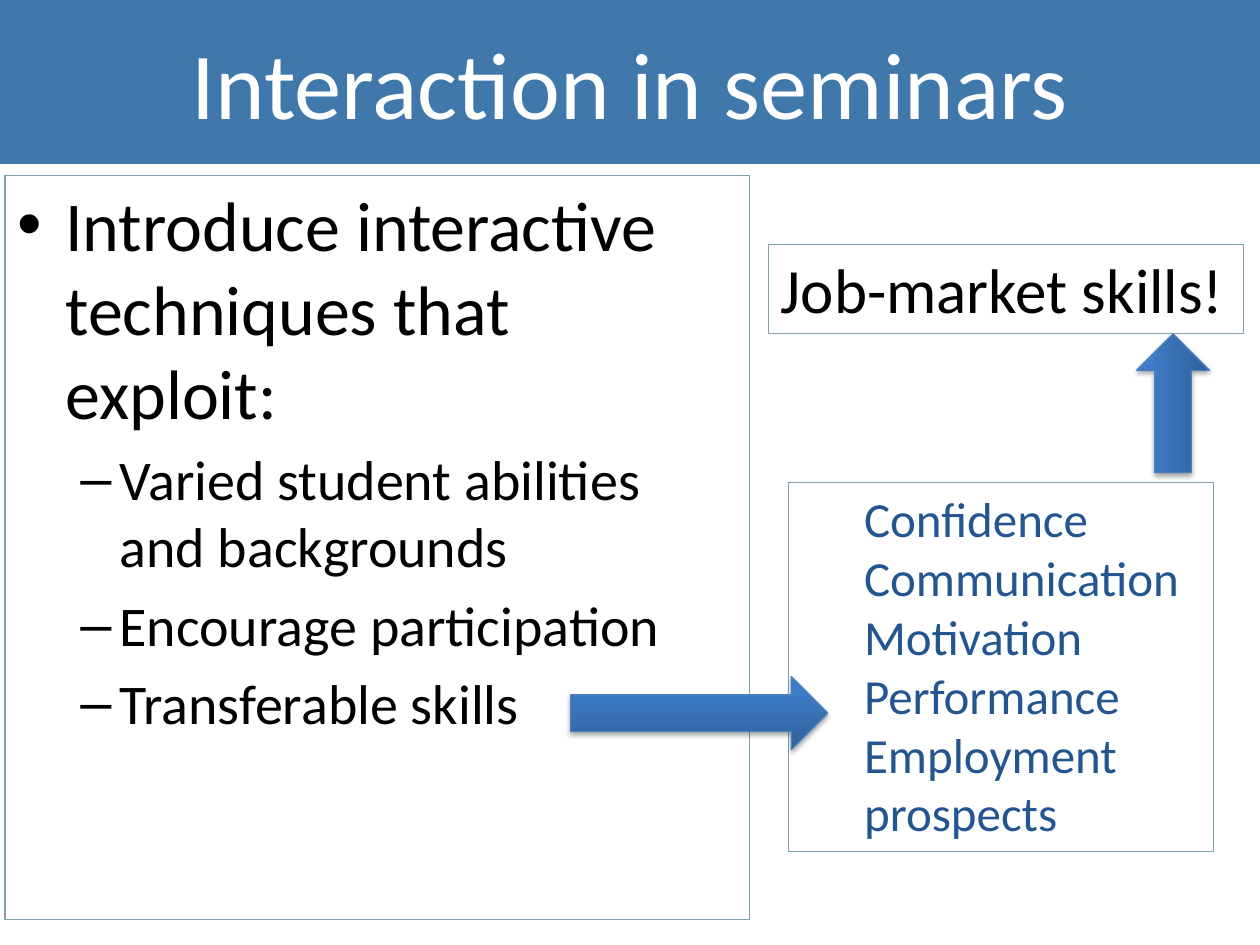
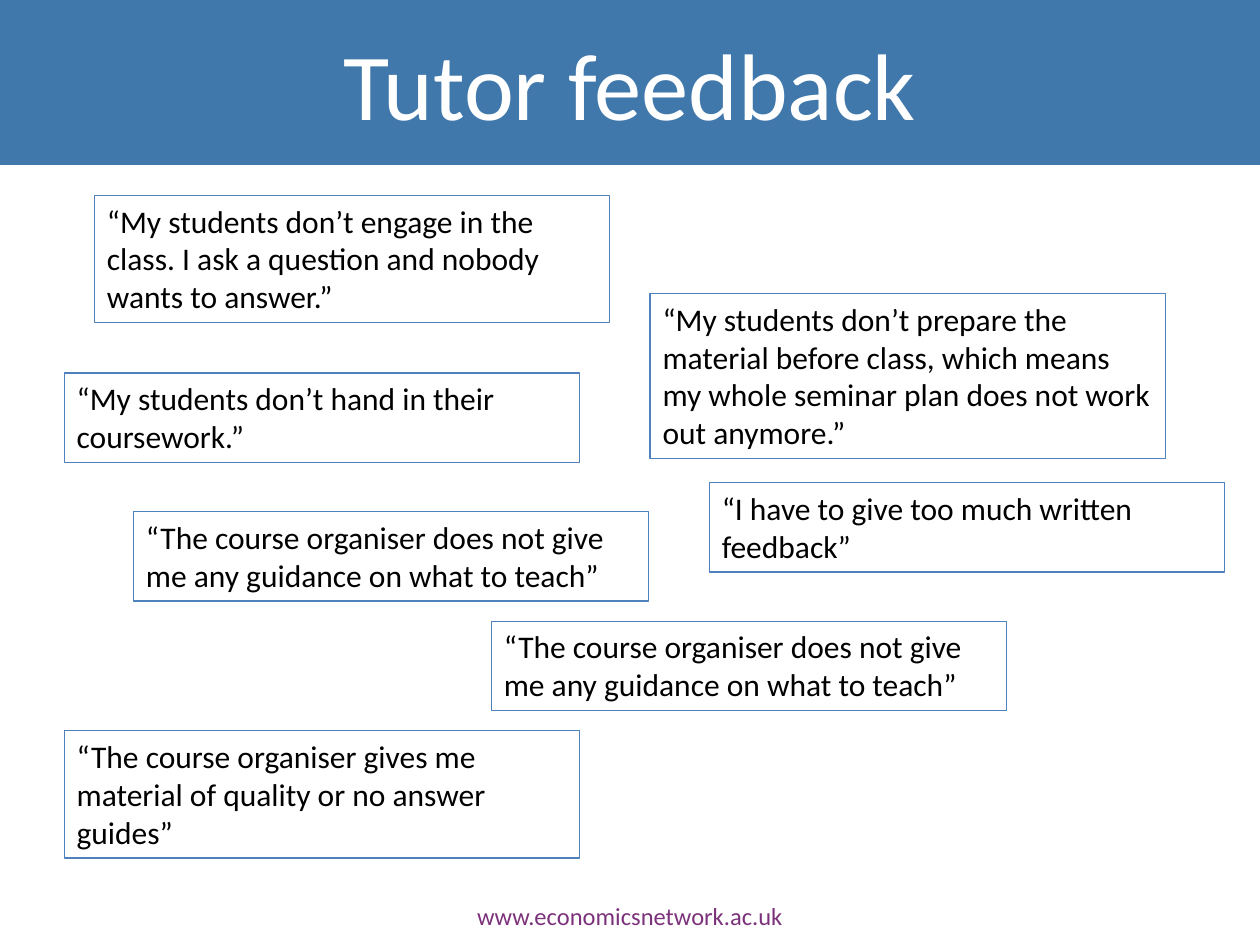
from copy import deepcopy

from lxml.etree import SubElement
from pptx import Presentation
from pptx.dml.color import RGBColor
from pptx.enum.shapes import MSO_SHAPE
from pptx.enum.text import MSO_ANCHOR, MSO_AUTO_SIZE, PP_ALIGN
from pptx.oxml.ns import qn
from pptx.util import Inches, Pt

FONT = "Calibri"
WHITE, BLACK, BAND, SKILL_BLUE, FOOTER_PURPLE = "FFFFFF", "000000", "4078AB", "235591", "7C327B"
PANEL_LINE, QUOTE_LINE, ARROW_LINE = "7FA1AC", "4F81BD", "4B7EBC"
ARROW_STOPS = [(0, "2F5F99"), (0.8, "3D7CC7"), (1, "3A7CCB")]

SEMINAR_TITLE = "Interaction in seminars"
SEMINAR_POINTS = [
    (0, "Introduce interactive techniques that exploit:"),
    (1, "Varied student abilities and backgrounds"),
    (1, "Encourage participation"),
    (1, "Transferable skills"),
]
POINT_LEVELS = [("•", 40, 0.38, -0.38), ("–", 32, 0.81, -0.31)]
SKILLS = ["Confidence", "Communication", "Motivation", "Performance", "Employment prospects"]
OUTCOME = "Job-market skills!"
ARROWS = [((4.53, 5.37, 2.04, 0.58), 0), ((8.76, 2.91, 1.1, 0.58), 270)]

FEEDBACK_TITLE = "Tutor feedback"
FOOTER = "www.economicsnetwork.ac.uk"
NO_GUIDANCE = ["“The course organiser does not give", "me any guidance on what to teach”"]
QUOTES = [
    (0.75, 1.55, 3, ["“My students don’t engage in the class. I ask a question and nobody wants to answer.”"]),
    (5.16, 2.33, 4, ["“My students don’t prepare the material before class, which means "
                     "my whole seminar plan does not work out anymore.”"]),
    (0.51, 2.96, 2, ["“My students don’t hand in their", "coursework.”"]),
    (5.63, 3.83, 2, ["“I have to give too much written feedback”"]),
    (1.06, 4.06, 2, NO_GUIDANCE),
    (3.9, 4.93, 2, NO_GUIDANCE),
    (0.51, 5.8, 3, ["“The course organiser gives me material of quality or no answer guides”"]),
]
QUOTE_WIDTH, QUOTE_LINE_HEIGHT, QUOTE_PADDING = 4.09, 0.3, 0.11


def rgb(color):
    """Turn a hex string into a colour."""
    return RGBColor.from_string(color)


def add_run(paragraph, text, size, color):
    """Add one formatted run."""
    run = paragraph.add_run()
    run.text = text
    run.font.name = FONT
    run.font.size = Pt(size)
    run.font.color.rgb = rgb(color)


def set_indent(paragraph, left, first=0, bullet=None):
    """Set the indents of a paragraph, and its bullet if there is one."""
    properties = paragraph._p.get_or_add_pPr()
    properties.set("marL", str(Inches(left)))
    properties.set("indent", str(Inches(first)))
    if bullet:
        SubElement(properties, qn("a:buFont")).set("typeface", "Arial")
        SubElement(properties, qn("a:buChar")).set("char", bullet)


def add_paragraphs(frame, count):
    """Return the first paragraph of a frame and enough new ones."""
    return [frame.paragraphs[0]] + [frame.add_paragraph() for _ in range(count - 1)]


def add_box(slide, place, lines, size, color, outline=None, wrap=True, grow=True):
    """Add a text box with one paragraph per line."""
    box = slide.shapes.add_textbox(*map(Inches, place))
    frame = box.text_frame
    frame.word_wrap = wrap
    frame.auto_size = MSO_AUTO_SIZE.SHAPE_TO_FIT_TEXT if grow else MSO_AUTO_SIZE.NONE
    if outline:
        box.line.color.rgb = rgb(outline)
        box.line.width = Pt(0.75)
    if lines:
        for paragraph, line in zip(add_paragraphs(frame, len(lines)), lines):
            add_run(paragraph, line, size, color)
    return frame


def add_arrow(slide, place, rotation):
    """Add a shaded block arrow with a soft shadow."""
    arrow = slide.shapes.add_shape(MSO_SHAPE.RIGHT_ARROW, *map(Inches, place))
    arrow.rotation = rotation
    arrow.line.color.rgb = rgb(ARROW_LINE)
    arrow.line.width = Pt(0.75)
    arrow.fill.gradient()
    arrow.fill.gradient_angle = 90
    properties = arrow._element.spPr
    stop_list = properties.find(qn("a:gradFill")).find(qn("a:gsLst"))
    stop_list.append(deepcopy(stop_list[0]))
    for stop, (position, color) in zip(arrow.fill.gradient_stops, ARROW_STOPS):
        stop.position = position
        stop.color.rgb = rgb(color)
    arrow.shadow.inherit = False
    shadow = SubElement(properties.find(qn("a:effectLst")), qn("a:outerShdw"), blurRad=str(Pt(3.1)),
                        dist=str(Pt(1.8)), dir="5400000", rotWithShape="0")
    tint = SubElement(shadow, qn("a:srgbClr"), val=BLACK)
    SubElement(tint, qn("a:alpha"), val="35000")


def add_slide(deck, heading, top=0):
    """Add a slide whose title fills the blue band."""
    slide = deck.slides.add_slide(deck.slide_layouts[5])
    title = slide.shapes.title
    title.left, title.top, title.width, title.height = map(Inches, (0, top, 10, 1.31))
    title.fill.solid()
    title.fill.fore_color.rgb = rgb(BAND)
    frame = title.text_frame
    frame.auto_size = MSO_AUTO_SIZE.NONE
    frame.vertical_anchor = MSO_ANCHOR.MIDDLE
    frame.paragraphs[0].alignment = PP_ALIGN.CENTER
    add_run(frame.paragraphs[0], heading, 54, WHITE)
    return slide


def build_seminars(deck):
    """Build the slide on interaction in seminars."""
    slide = add_slide(deck, SEMINAR_TITLE, -0.01)
    points = add_box(slide, (0.04, 1.39, 5.91, 5.91), [], 0, BLACK, PANEL_LINE, grow=False)
    paragraphs = add_paragraphs(points, len(SEMINAR_POINTS))
    for index, (paragraph, (level, text)) in enumerate(zip(paragraphs, SEMINAR_POINTS)):
        bullet, size, left, first = POINT_LEVELS[level]
        paragraph.level = level
        set_indent(paragraph, left, first, bullet)
        if index:
            paragraph.space_before = Pt(size * 0.2)
        add_run(paragraph, text, size, BLACK)
    skills = add_box(slide, (6.26, 3.83, 3.37, 2.93), SKILLS, 28, SKILL_BLUE, PANEL_LINE)
    for paragraph in skills.paragraphs:
        paragraph.level = 1
        set_indent(paragraph, 0.5)
    add_box(slide, (6.1, 1.94, 3.77, 0.71), [OUTCOME], 36, BLACK, PANEL_LINE, wrap=False)
    for place, rotation in ARROWS:
        add_arrow(slide, place, rotation)


def build_feedback(deck):
    """Build the slide of tutor quotes."""
    slide = add_slide(deck, FEEDBACK_TITLE)
    footer = add_box(slide, (0, 7.1, 10, 0.34), [FOOTER], 14, FOOTER_PURPLE)
    footer.paragraphs[0].alignment = PP_ALIGN.CENTER
    for left, top, rows, quote in QUOTES:
        height = QUOTE_PADDING + rows * QUOTE_LINE_HEIGHT
        add_box(slide, (left, top, QUOTE_WIDTH, height), quote, 18, BLACK, QUOTE_LINE)


def main():
    """Build and save the deck."""
    deck = Presentation()
    deck.slide_width, deck.slide_height = Inches(10), Inches(7.5)
    build_seminars(deck)
    build_feedback(deck)
    deck.save("out.pptx")


if __name__ == "__main__":
    main()
